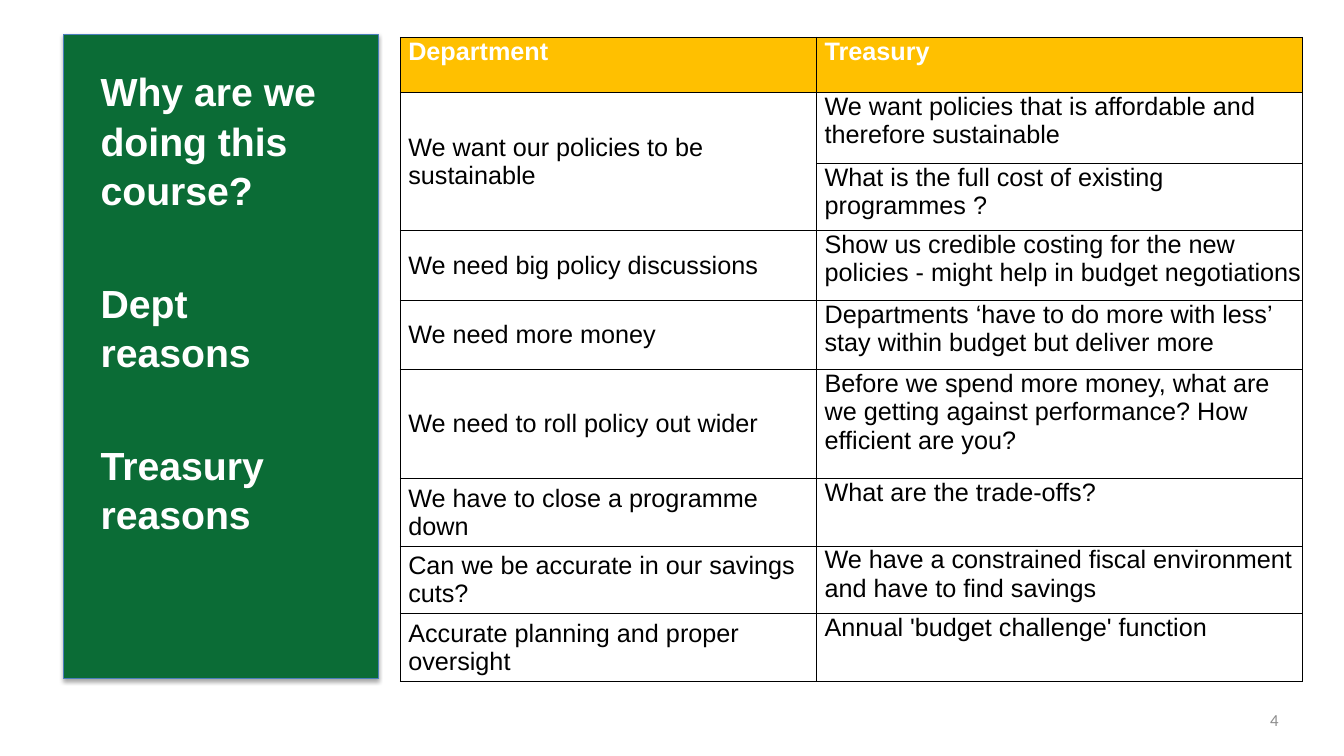
"""Build the slide that sets departmental reasons beside Treasury reasons."""
from dataclasses import dataclass

from lxml.etree import SubElement
from pptx import Presentation
from pptx.dml.color import RGBColor
from pptx.enum.shapes import MSO_SHAPE
from pptx.enum.text import MSO_ANCHOR, PP_ALIGN
from pptx.oxml.ns import qn
from pptx.util import Emu, Inches, Pt

SLIDE_W, SLIDE_H = Inches(13.33), Inches(7.5)
GREEN, GOLD, WHITE, BLACK = "0B6C36", "FFC000", "FFFFFF", "000000"
EDGE_BLUE, GREY = "4B7EBC", "8C8C8C"


def across(percent: float) -> Emu:
    return Emu(round(SLIDE_W * percent / 100))


def down(percent: float) -> Emu:
    return Emu(round(SLIDE_H * percent / 100))


def rgb(colour: str) -> RGBColor:
    return RGBColor.from_string(colour)


@dataclass(frozen=True)
class Box:
    left: float
    top: float
    width: float
    height: float

    def emu(self) -> tuple[Emu, Emu, Emu, Emu]:
        return across(self.left), down(self.top), across(self.width), down(self.height)


@dataclass(frozen=True)
class Style:
    size: float
    colour: str
    bold: bool = False
    name: str = "Arial"


@dataclass(frozen=True)
class Row:
    height: float
    department: str
    treasury: str


PANEL = Box(4.73, 4.53, 23.41, 85.2)
HEADING = Box(6.75, 8, 19.8, 79.07)
TABLE = Box(29.78, 4.93, 67.14, 85.2)
NUMBER = Box(90.17, 92.67, 5.7, 5.2)
COLUMNS = (30.98, 36.16)

HEADING_STYLE = Style(28, WHITE, True)
HEADER_STYLE = Style(18, WHITE, True)
BODY_STYLE = Style(18, BLACK)
NUMBER_STYLE = Style(12, GREY, name="Calibri")

HEADINGS = ("Why are we doing this course?", "Dept reasons", "Treasury reasons")
ROWS = (
    Row(7.33, "Department", "Treasury"),
    Row(9.33, "We want our policies to be sustainable",
        "We want policies that is affordable and therefore sustainable"),
    Row(8.93, "", "What is the full cost of existing programmes ?"),
    Row(9.2, "We need big policy discussions",
        "Show us credible costing for the new policies - might help in budget negotiations"),
    Row(9.2, "We need more money",
        "Departments ‘have to do more with less’ stay within budget but deliver more"),
    Row(14.4, "We need to roll policy out wider",
        "Before we spend more money, what are we getting against performance? "
        "How efficient are you?"),
    Row(8.93, "We have to close a programme down", "What are the trade-offs?"),
    Row(8.93, "Can we be accurate in our savings cuts?",
        "We have a constrained fiscal environment and have to find savings"),
    Row(8.93, "Accurate planning and proper oversight", "Annual 'budget challenge' function"),
)


def write(p, text: str, style: Style) -> None:
    p.text = text
    for r in p.runs:
        r.font.size, r.font.bold, r.font.name = Pt(style.size), style.bold, style.name
        r.font.color.rgb = rgb(style.colour)


def add_panel(s) -> None:
    sp = s.shapes.add_shape(MSO_SHAPE.RECTANGLE, *PANEL.emu())
    sp.fill.solid()
    sp.fill.fore_color.rgb = rgb(GREEN)
    sp.line.color.rgb = rgb(EDGE_BLUE)
    sp.line.width = Pt(0.75)
    sp.shadow.inherit = False
    effects = sp._element.spPr.find(qn("a:effectLst"))
    shadow = SubElement(effects, qn("a:outerShdw"), blurRad=str(Pt(3.1)), dist=str(Pt(1.8)),
                        dir="5400000", rotWithShape="0")
    colour = SubElement(shadow, qn("a:srgbClr"), val=BLACK)
    SubElement(colour, qn("a:alpha"), val="35000")


def add_text(s, box: Box, lines: tuple[str, ...], style: Style, gap: float = 0,
             spacing: float = 1, align=PP_ALIGN.LEFT, anchor=MSO_ANCHOR.TOP) -> None:
    tf = s.shapes.add_textbox(*box.emu()).text_frame
    tf.word_wrap, tf.vertical_anchor = True, anchor
    for i, line in enumerate(lines):
        p = tf.add_paragraph() if i else tf.paragraphs[0]
        write(p, line, style)
        p.alignment, p.line_spacing = align, spacing
        if i:
            p.space_before = Pt(gap)


def add_borders(cell) -> None:
    tcPr = cell._tc.get_or_add_tcPr()
    for i, side in enumerate(("lnL", "lnR", "lnT", "lnB")):
        ln = tcPr.makeelement(qn(f"a:{side}"), {"w": str(Pt(0.5))})
        fill = SubElement(ln, qn("a:solidFill"))
        SubElement(fill, qn("a:srgbClr"), val=BLACK)
        tcPr.insert(i, ln)


def fill_cell(cell, text: str, header: bool, centred: bool) -> None:
    cell.margin_left = Inches(0.08)
    cell.margin_right = cell.margin_top = cell.margin_bottom = 0
    cell.vertical_anchor = MSO_ANCHOR.MIDDLE if centred else MSO_ANCHOR.TOP
    if header:
        cell.fill.solid()
        cell.fill.fore_color.rgb = rgb(GOLD)
    else:
        cell.fill.background()
    write(cell.text_frame.paragraphs[0], text, HEADER_STYLE if header else BODY_STYLE)
    add_borders(cell)


def add_reasons(s) -> None:
    table = s.shapes.add_table(len(ROWS), len(COLUMNS), *TABLE.emu()).table
    table.first_row = table.horz_banding = False
    for column, width in zip(table.columns, COLUMNS):
        column.width = across(width)
    for i, row in enumerate(ROWS):
        table.rows[i].height = down(row.height)
        for j, text in enumerate((row.department, row.treasury)):
            fill_cell(table.cell(i, j), text, header=i == 0, centred=i > 0 and j == 0)
    table.cell(1, 0).merge(table.cell(2, 0))


def main() -> None:
    prs = Presentation()
    prs.slide_width, prs.slide_height = SLIDE_W, SLIDE_H
    s = prs.slides.add_slide(prs.slide_layouts[6])
    add_panel(s)
    add_text(s, NUMBER, ("4",), NUMBER_STYLE, align=PP_ALIGN.RIGHT, anchor=MSO_ANCHOR.MIDDLE)
    add_text(s, HEADING, HEADINGS, HEADING_STYLE, gap=45, spacing=1.05)
    add_reasons(s)
    prs.save("out.pptx")


if __name__ == "__main__":
    main()
